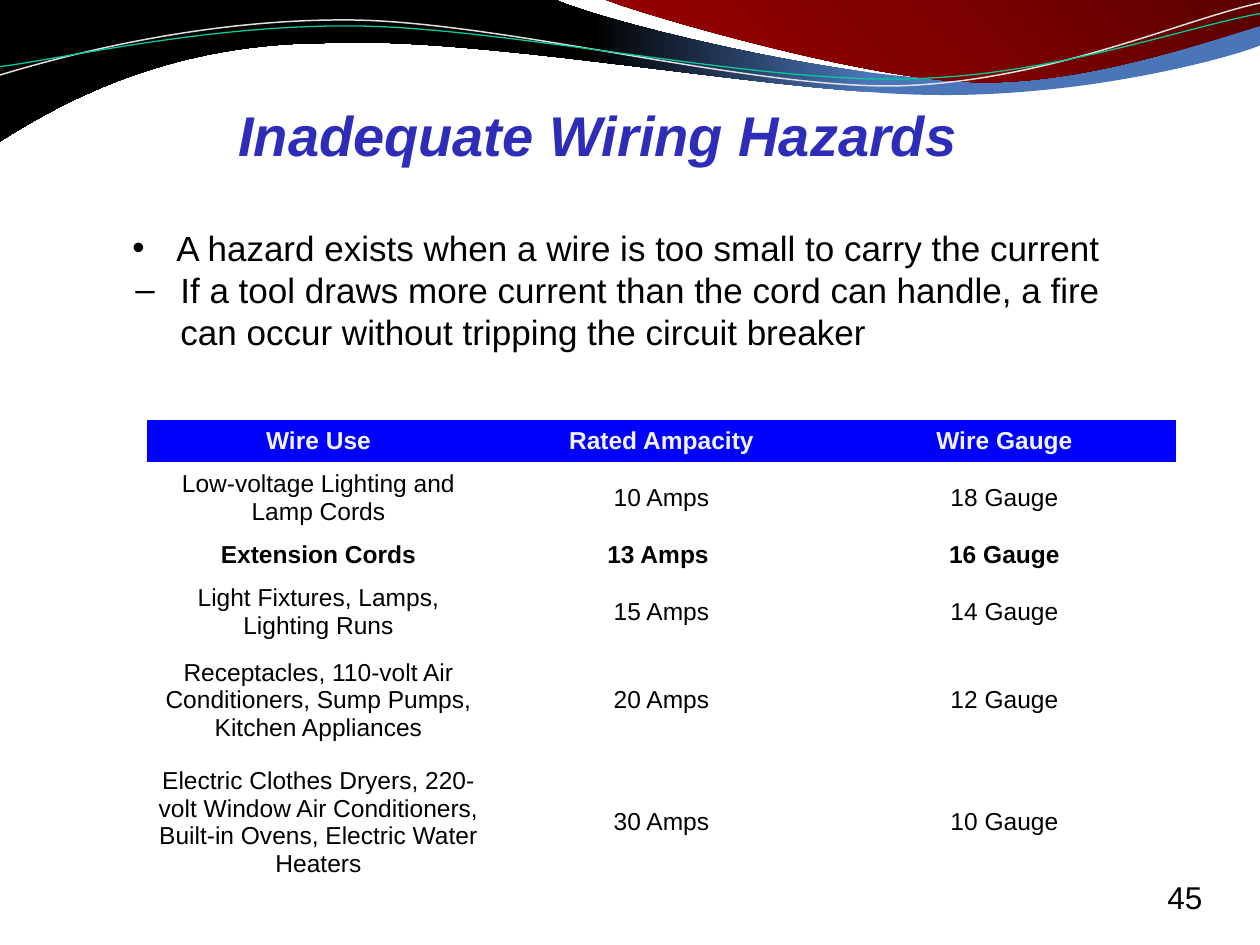
import pptx
import pptx.dml.color
import pptx.enum.text
import pptx.oxml
import pptx.oxml.ns
import pptx.util
import copy

SCALE = 914400 / 126
COLORS = {
    "title": "2D2DB9", "text": "000000", "header": "0000FF", "header_text": "F2F2F2",
    "blue": "4B75B9", "black": "000000", "silver": "E1E1E1", "green": "00CC99",
    "red_dark": "5B0000", "red_mid": "810000", "red": "990000",
}
CENTER = pptx.enum.text.PP_ALIGN.CENTER
LEFT = pptx.enum.text.PP_ALIGN.LEFT

# Each path is a start point, then lines (x, y) and cubic curves (six numbers).
BLUE_WAVE = [
    (0, -1), (554, -1), (600, 21, 837, 79, 955, 79), (1075, 79, 1207, 33, 1260, 11),
    (1261, 45), (1239, 55, 1096, 96, 940, 95), (784, 95, 481, 35, 324, 43),
    (163, 44, 58, 105, -1, 142),
]
RED_WAVE = [
    (604, -1), (641, 14, 859, 78, 969, 82), (1079, 87, 1211, 40, 1260, 26), (1260, 0),
]
SILVER_CURVE = [
    (-3, 76), (59, 57, 199, 19, 349, 20), (499, 21, 745, 88, 896, 86),
    (1048, 82, 1184, 19, 1260, 3),
]
GREEN_CURVE = [
    (-3, 67), (58, 60, 207, 24, 358, 26), (508, 28, 751, 82, 902, 79),
    (1052, 77, 1187, 26, 1263, 13),
]
# Mark, left margin, hanging indent, wording
BULLETS = [
    ("•", 59, 44, "A hazard exists when a wire is too small to carry the current"),
    ("–", 63, 45, "If a tool draws more current than the cord can handle, "
                  "a fire can occur without tripping the circuit breaker"),
]
WIRE_ROWS = [
    ("Wire Use", "Rated Ampacity", "Wire Gauge"),
    ("Low-voltage Lighting and Lamp Cords", "10 Amps", "18 Gauge"),
    ("Extension Cords", "13 Amps ", "16 Gauge"),
    ("Light Fixtures, Lamps, Lighting Runs", "15 Amps", "14 Gauge"),
    ("Receptacles, 110-volt Air Conditioners, Sump Pumps, Kitchen Appliances",
     "20 Amps", "12 Gauge"),
    ("Electric Clothes Dryers, 220-volt Window Air Conditioners, "
     "Built-in Ovens, Electric Water Heaters", "30 Amps", "10 Gauge"),
]
ROW_HEIGHTS = [42, 72, 42, 72, 105, 139]
BOLD_ROWS = (0, 2)


def emu(px):
    return pptx.util.Emu(round(px * SCALE))


def rgb(name):
    return pptx.dml.color.RGBColor.from_string(COLORS[name])


class SlideBuilder:
    font = "Arial"

    def __init__(self, deck):
        self.page = deck.slides.add_slide(deck.slide_layouts[6])

    def outline(self, path, close):
        """Draw through all nodes, then join each curve's three nodes into a Bézier."""
        nodes = [(emu(segment[i]), emu(segment[i + 1]))
                 for segment in path for i in range(0, len(segment), 2)]
        builder = self.page.shapes.build_freeform(*nodes[0], scale=1.0)
        builder.add_line_segments(nodes[1:], close=close)
        shape = builder.convert_to_shape()
        shape.shadow.inherit = False
        lines = iter(shape._element.findall(".//" + pptx.oxml.ns.qn("a:lnTo")))
        for segment in path[1:]:
            first = next(lines)
            if len(segment) == 6:
                first.tag = pptx.oxml.ns.qn("a:cubicBezTo")
                for line in (next(lines), next(lines)):
                    first.append(line[0])
                    line.getparent().remove(line)
        return shape

    def wave(self, path, angle, stops):
        shape = self.outline(path, True)
        shape.line.fill.background()
        shape.fill.gradient()
        shape.fill.gradient_angle = angle
        stop_list = shape._element.find(".//" + pptx.oxml.ns.qn("a:gsLst"))
        while len(stop_list) < len(stops):
            stop_list.append(copy.deepcopy(stop_list[0]))
        for stop, (position, color) in zip(shape.fill.gradient_stops, stops):
            stop.position = position
            stop.color.rgb = rgb(color)

    def curve(self, path, color, width):
        shape = self.outline(path, False)
        shape.fill.background()
        shape.line.color.rgb = rgb(color)
        shape.line.width = pptx.util.Pt(width)

    def style(self, para, size, color="text", bold=False, italic=False, align=LEFT):
        para.alignment = align
        for span in para.runs:
            font = span.font
            font.name, font.size = self.font, pptx.util.Pt(size)
            font.bold, font.italic = bold, italic
            font.color.rgb = rgb(color)

    def text(self, left, top, width, height, words, size, **look):
        box = self.page.shapes.add_textbox(*map(emu, (left, top, width, height)))
        frame = box.text_frame
        frame.word_wrap = True
        frame.text = words
        for para in frame.paragraphs:
            self.style(para, size, **look)
        return frame

    def bullets(self, left, top, width, height, items, size):
        words = "\n".join(item[-1] for item in items)
        frame = self.text(left, top, width, height, words, size)
        for para, (mark, margin, hang, _) in zip(frame.paragraphs, items):
            para.line_spacing = pptx.util.Pt(24)
            props = para._p.get_or_add_pPr()
            props.set("marL", str(emu(margin)))
            props.set("indent", str(emu(-hang)))
            namespace = pptx.oxml.ns.nsdecls("a")
            for tag in (f'<a:buFont {namespace} typeface="{self.font}"/>',
                        f'<a:buChar {namespace} char="{mark}"/>'):
                props.append(pptx.oxml.parse_xml(tag))

    def table(self, left, top, column_width, heights, rows, size):
        columns = len(rows[0])
        table = self.page.shapes.add_table(
            len(rows), columns, emu(left), emu(top),
            emu(column_width * columns), emu(sum(heights))).table
        style_id = table._tbl.tblPr.find(pptx.oxml.ns.qn("a:tableStyleId"))
        style_id.text = "{2D5ABB26-0587-4C30-8999-92F81FD0307C}"  # no style, no grid
        table.horz_banding = False
        for column in table.columns:
            column.width = emu(column_width)
        for index, values in enumerate(rows):
            table.rows[index].height = emu(heights[index])
            for cell, value in zip(table.rows[index].cells, values):
                cell.text = value
                cell.vertical_anchor = pptx.enum.text.MSO_ANCHOR.MIDDLE
                cell.margin_left = cell.margin_right = emu(5)
                cell.margin_top = cell.margin_bottom = emu(5)
                if index == 0:
                    cell.fill.solid()
                    cell.fill.fore_color.rgb = rgb("header")
                else:
                    cell.fill.background()
                self.style(cell.text_frame.paragraphs[0], size,
                           color="text" if index else "header_text",
                           bold=index in BOLD_ROWS, align=CENTER)


def main():
    deck = pptx.Presentation()
    deck.slide_width, deck.slide_height = emu(1260), emu(945)
    slide = SlideBuilder(deck)
    slide.wave(BLUE_WAVE, 180, [(0.31, "blue"), (0.53, "black")])
    slide.wave(RED_WAVE, 225, [(0, "red_dark"), (0.5, "red_mid"), (1, "red")])
    slide.curve(SILVER_CURVE, "silver", 0.85)
    slide.curve(GREEN_CURVE, "green", 0.75)
    slide.text(1155, 872, 84, 50, "45", 18)
    slide.text(31, 94, 1134, 105, "Inadequate Wiring Hazards", 32,
               color="title", bold=True, italic=True, align=CENTER)
    slide.bullets(105, 220, 1050, 624, BULLETS, 20)
    slide.table(147, 420, 343, ROW_HEIGHTS, WIRE_ROWS, 14)
    deck.save("out.pptx")


if __name__ == "__main__":
    main()
